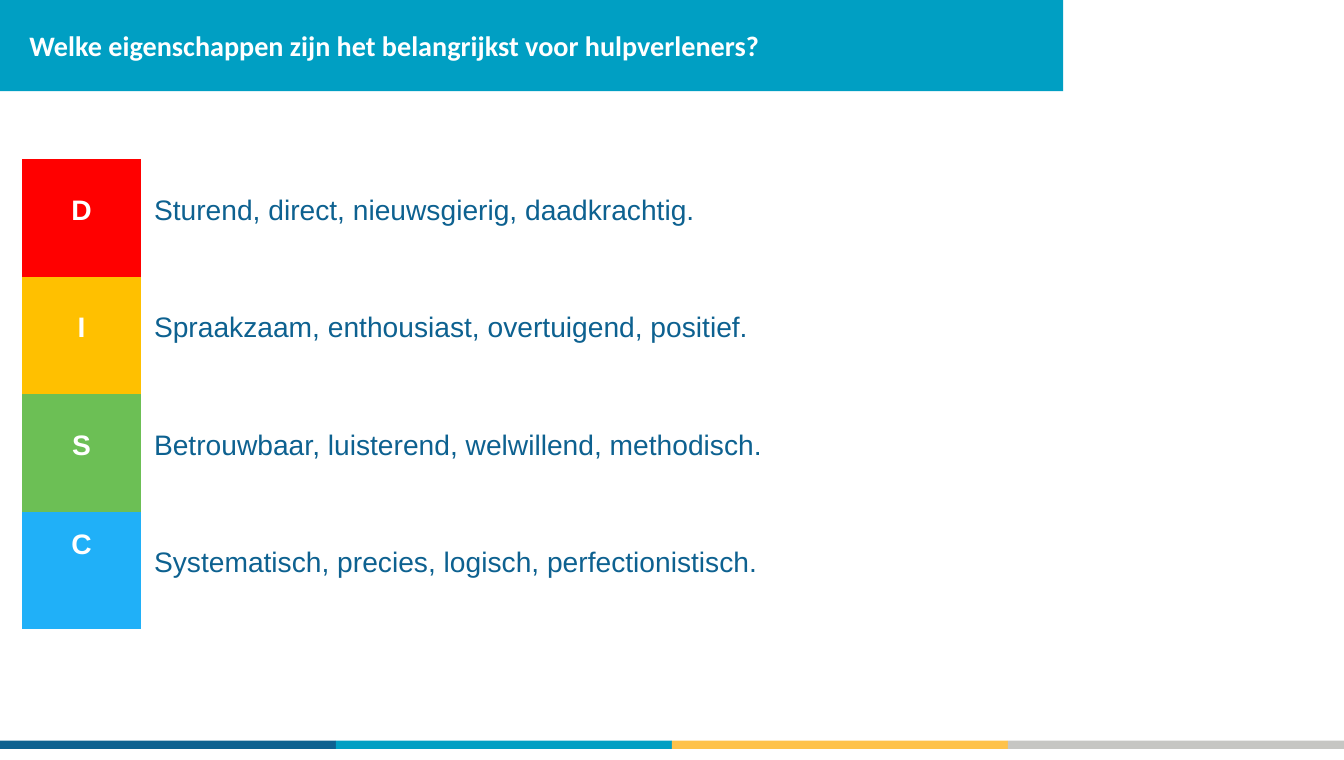
"""Build the slide on the DISC traits of care workers."""
from dataclasses import dataclass

from pptx import Presentation
from pptx.dml.color import RGBColor
from pptx.enum.shapes import MSO_SHAPE
from pptx.enum.text import MSO_ANCHOR, PP_ALIGN
from pptx.oxml.ns import qn
from pptx.util import Inches, Pt

RECTANGLE = MSO_SHAPE.RECTANGLE
TOP, MIDDLE = MSO_ANCHOR.TOP, MSO_ANCHOR.MIDDLE
LEFT, CENTER = PP_ALIGN.LEFT, PP_ALIGN.CENTER
TITLE_ONLY = 5
PLAIN_TABLE_STYLE = "{2D5ABB26-0587-4C30-8999-92F81FD0307C}"
WIDTH, HEIGHT = 13.26, 7.5

TITLE = "Welke eigenschappen zijn het belangrijkst voor hulpverleners?"
TRAITS = [
    ("D", "Sturend, direct, nieuwsgierig, daadkrachtig.", "FF0000", 0.35),
    ("I", "Spraakzaam, enthousiast, overtuigend, positief.", "FFC000", 0.35),
    ("S", "Betrouwbaar, luisterend, welwillend, methodisch.", "6CBF55", 0.35),
    ("C", "Systematisch, precies, logisch, perfectionistisch.", "20B0F8", 0.17),
]


@dataclass(frozen=True)
class Theme:
    """Colours, fonts and type size of the slide."""
    navy: str = "0D6190"
    teal: str = "009FC3"
    amber: str = "FEC24A"
    grey: str = "C6C6C3"
    white: str = "FFFFFF"
    title_font: str = "Calibri"
    body_font: str = "Arial"
    size: int = 20


class SlideBuilder:
    """Draws styled elements on one slide, placed in inches."""

    def __init__(self, slide, theme):
        """Keep the slide and its theme."""
        self.slide = slide
        self.theme = theme

    def style(self, paragraph, font_name, color, bold, alignment):
        """Format a whole paragraph."""
        paragraph.alignment = alignment
        paragraph.font.name = font_name
        paragraph.font.size = Pt(self.theme.size)
        paragraph.font.bold = bold
        paragraph.font.color.rgb = RGBColor.from_string(color)

    def bar(self, left, top, width, height, color):
        """Add a plain filled rectangle."""
        shape = self.slide.shapes.add_shape(
            RECTANGLE, *map(Inches, (left, top, width, height)))
        shape.shadow.inherit = False
        shape.fill.solid()
        shape.fill.fore_color.rgb = RGBColor.from_string(color)
        shape.line.fill.background()

    def stripe(self, top, height, colors):
        """Divide the slide's width equally among coloured bars."""
        width = WIDTH / len(colors)
        for column, color in enumerate(colors):
            self.bar(column * width, top, width, height, color)

    def title(self, text, left, top, width, height):
        """Fill the title placeholder and bring it to the front."""
        title = self.slide.shapes.title
        title.left, title.top, title.width, title.height = map(
            Inches, (left, top, width, height))
        title.text_frame.text = text
        title.text_frame.vertical_anchor = MIDDLE
        self.style(title.text_frame.paragraphs[0], self.theme.title_font,
                   self.theme.white, True, LEFT)
        title.element.getparent().append(title.element)

    def cell(self, cell, text, top_margin, color, bold, alignment, fill=None):
        """Write one table cell, with a fill if given."""
        cell.text = text
        cell.vertical_anchor = TOP
        cell.margin_left = cell.margin_right = Inches(0.13)
        cell.margin_top = Inches(top_margin)
        cell.margin_bottom = Inches(0.05)
        if fill:
            cell.fill.solid()
            cell.fill.fore_color.rgb = RGBColor.from_string(fill)
        else:
            cell.fill.background()
        self.style(cell.text_frame.paragraphs[0], self.theme.body_font,
                   color, bold, alignment)

    def trait_table(self, traits, left, top, columns, row_height):
        """Add a table of letters and the traits they stand for."""
        frame = self.slide.shapes.add_table(
            len(traits), len(columns), Inches(left), Inches(top),
            Inches(sum(columns)), Inches(row_height * len(traits)))
        table = frame.table
        table.first_row = table.horz_banding = False
        for style_id in frame.element.iter(qn("a:tableStyleId")):
            style_id.text = PLAIN_TABLE_STYLE
        for column, width in zip(table.columns, columns):
            column.width = Inches(width)
        for row, (letter, text, fill, letter_top) in zip(table.rows, traits):
            row.height = Inches(row_height)
            self.cell(row.cells[0], letter, letter_top, self.theme.white,
                      True, CENTER, fill)
            self.cell(row.cells[1], text, 0.35, self.theme.navy, False, LEFT)


def main():
    """Build and save the slide."""
    presentation = Presentation()
    presentation.slide_width = Inches(WIDTH)
    presentation.slide_height = Inches(HEIGHT)
    slide = presentation.slides.add_slide(
        presentation.slide_layouts[TITLE_ONLY])
    theme = Theme()
    builder = SlideBuilder(slide, theme)
    builder.stripe(7.31, 0.08,
                   (theme.navy, theme.teal, theme.amber, theme.grey))
    builder.bar(0, 0, 10.49, 0.9, theme.teal)
    builder.trait_table(TRAITS, 0.22, 1.57, (1.17, 10.73), 1.16)
    builder.title(TITLE, 0.19, 0.14, 9.99, 0.61)
    presentation.save("out.pptx")


if __name__ == "__main__":
    main()
